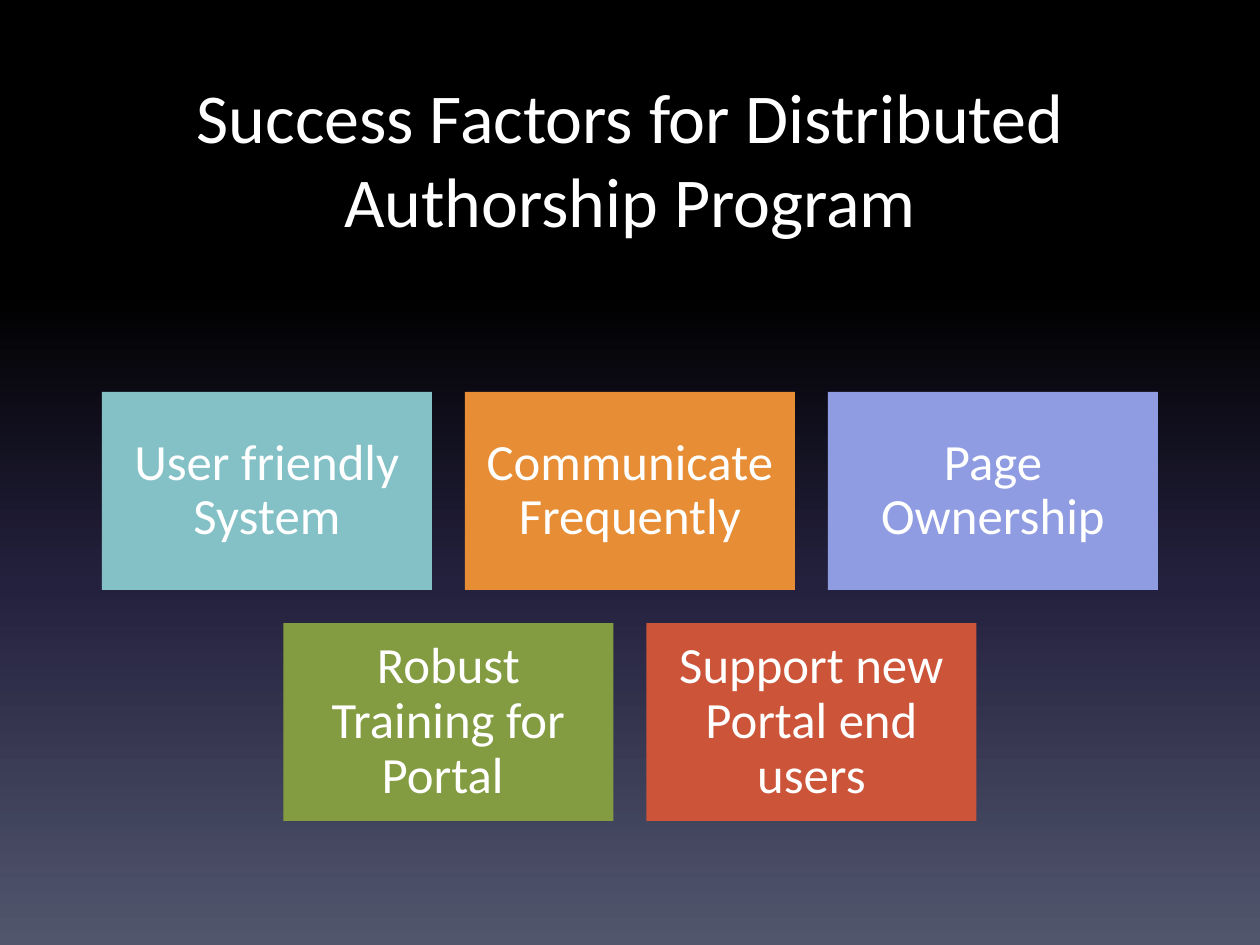
from dataclasses import dataclass

from lxml import etree
from pptx import Presentation
from pptx.dml.color import RGBColor
from pptx.enum import shapes, text
from pptx.oxml import ns
from pptx.util import Pt


@dataclass(frozen=True)
class Theme:
    font: str = "Calibri"
    ink: str = "FFFFFF"
    title_size: float = 40
    card_size: float = 29
    background: tuple = ((0, "000000"), (31, "000000"), (62, "24213E"), (100, "51566D"))


@dataclass(frozen=True)
class Card:
    label: str
    color: str


THEME = Theme()
SLIDE_WIDTH, SLIDE_HEIGHT = 720, 540
CARD_WIDTH, CARD_HEIGHT, CARD_GAP = 188.57, 113.14, 18.86
CARDS_TOP = 224
CARD_INSET = 8.7

CARD_ROWS = (
    (
        Card("User friendly System", "83C1C6"),
        Card("Communicate Frequently", "E78D35"),
        Card("Page Ownership", "909CE1"),
    ),
    (
        Card("Robust Training for Portal ", "839C41"),
        Card("Support new Portal end users", "CC5439"),
    ),
)


def paint_background(slide) -> None:
    fill = slide.background.fill
    fill.gradient()
    fill.gradient_angle = 270
    stop_list = slide.element.xpath(".//p:bg//a:gsLst")[0]
    for stop in list(stop_list):
        stop_list.remove(stop)
    for position, color in THEME.background:
        stop = etree.SubElement(stop_list, ns.qn("a:gs"), pos=str(position * 1000))
        etree.SubElement(stop, ns.qn("a:srgbClr"), val=color)


def write_text(paragraph, label: str, size: float) -> None:
    paragraph.alignment = text.PP_ALIGN.CENTER
    run = paragraph.add_run()
    run.text = label
    run.font.name = THEME.font
    run.font.size = Pt(size)
    run.font.color.rgb = RGBColor.from_string(THEME.ink)


def add_title(slide, label: str) -> None:
    title = slide.shapes.title
    title.left, title.top, title.width, title.height = Pt(36), Pt(36), Pt(648), Pt(90)
    frame = title.text_frame
    frame.word_wrap = True
    frame.auto_size = text.MSO_AUTO_SIZE.NONE
    frame.vertical_anchor = text.MSO_ANCHOR.TOP
    frame.margin_top = Pt(6)
    write_text(frame.paragraphs[0], label, THEME.title_size)


def add_card(slide, card: Card, left: float, top: float) -> None:
    shape = slide.shapes.add_shape(
        shapes.MSO_SHAPE.RECTANGLE, Pt(left), Pt(top), Pt(CARD_WIDTH), Pt(CARD_HEIGHT)
    )
    shape.shadow.inherit = False
    shape.fill.solid()
    shape.fill.fore_color.rgb = RGBColor.from_string(card.color)
    shape.line.fill.background()
    frame = shape.text_frame
    frame.word_wrap = True
    frame.vertical_anchor = text.MSO_ANCHOR.MIDDLE
    frame.margin_left = frame.margin_right = Pt(CARD_INSET)
    frame.margin_top = frame.margin_bottom = Pt(CARD_INSET)
    paragraph = frame.paragraphs[0]
    paragraph.line_spacing = 0.9
    write_text(paragraph, card.label, THEME.card_size)


def add_card_row(slide, cards: tuple[Card, ...], top: float) -> None:
    pitch = CARD_WIDTH + CARD_GAP
    left = (SLIDE_WIDTH - len(cards) * pitch + CARD_GAP) / 2
    for column, card in enumerate(cards):
        add_card(slide, card, left + column * pitch, top)


def main() -> None:
    presentation = Presentation()
    presentation.slide_width = Pt(SLIDE_WIDTH)
    presentation.slide_height = Pt(SLIDE_HEIGHT)
    slide = presentation.slides.add_slide(presentation.slide_layouts.get_by_name("Title Only"))
    paint_background(slide)
    add_title(slide, "Success Factors for Distributed Authorship Program")
    for row, cards in enumerate(CARD_ROWS):
        add_card_row(slide, cards, CARDS_TOP + row * (CARD_HEIGHT + CARD_GAP))
    presentation.save("out.pptx")


if __name__ == "__main__":
    main()
